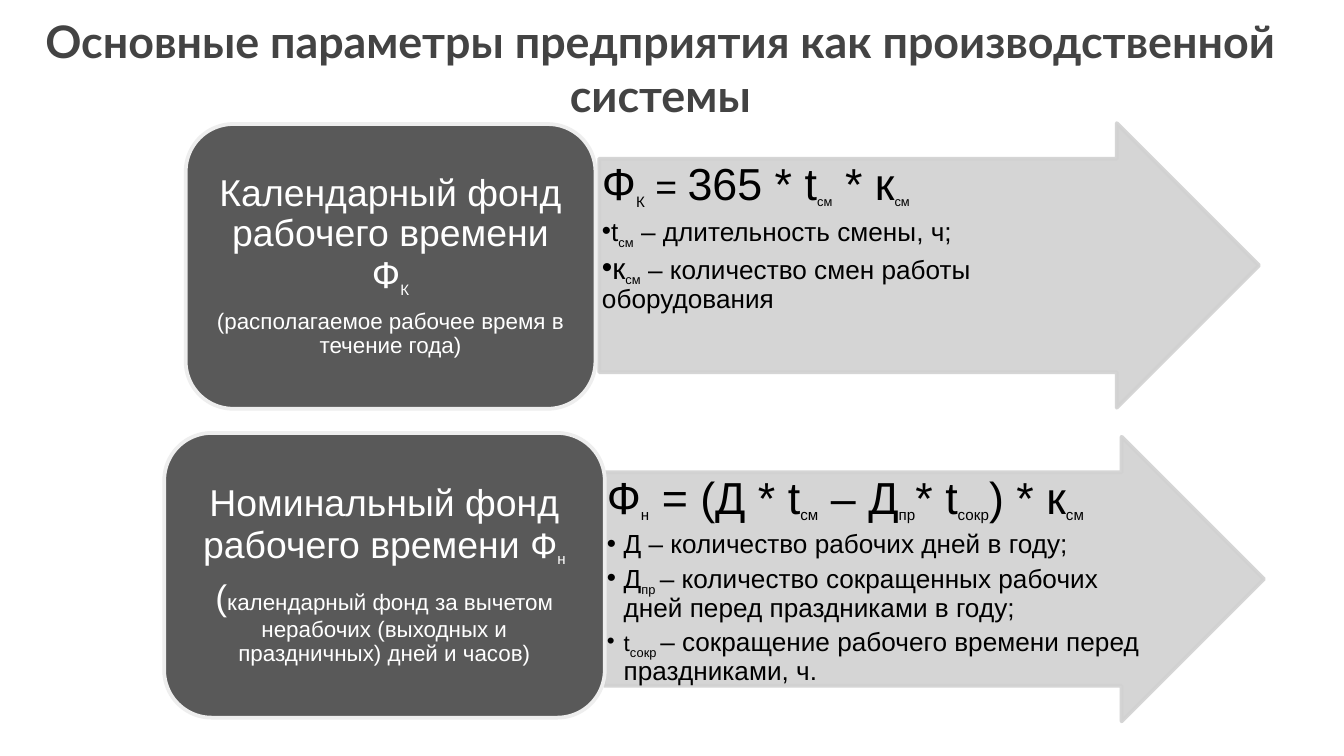
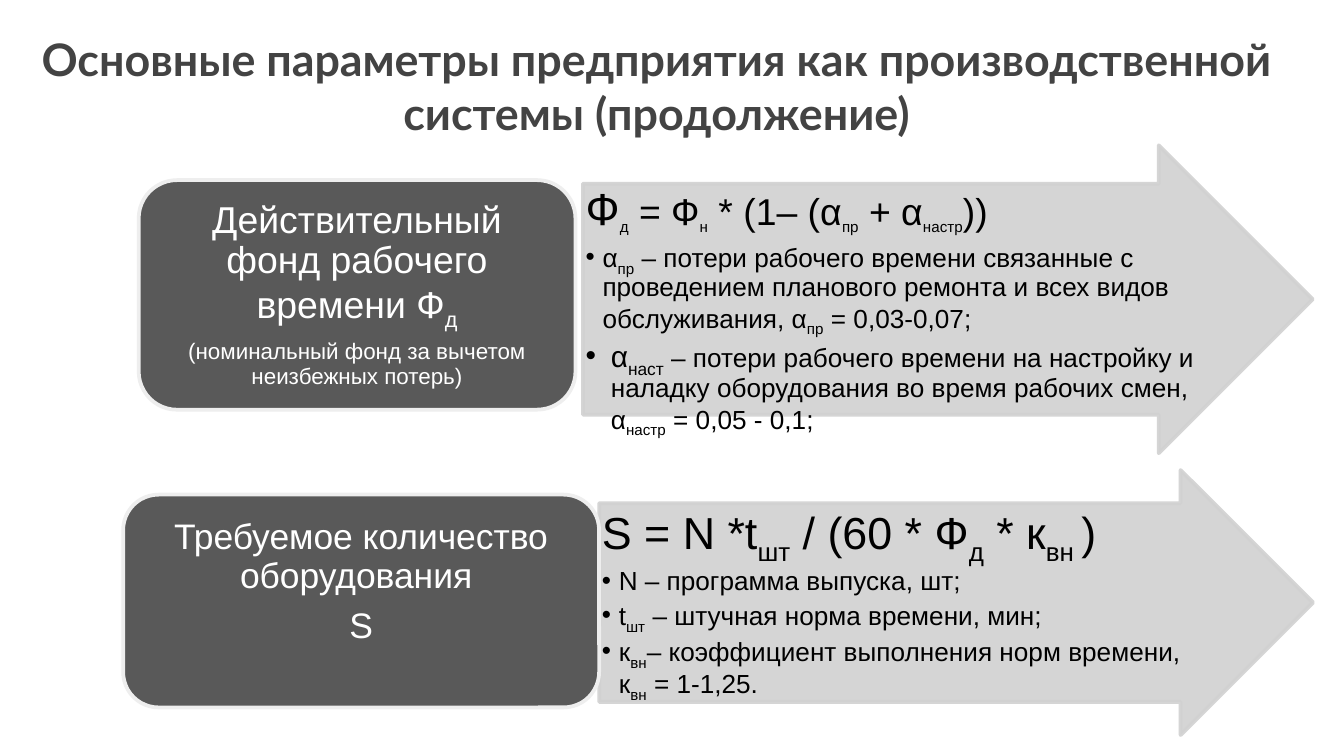
from lxml import etree
from pptx import Presentation
from pptx import util as u
from pptx.dml.color import RGBColor
from pptx.enum import shapes, text
from pptx.oxml import ns

Pt = u.Pt
TITLE_GREY = RGBColor(0x43, 0x43, 0x43)
BOX_GREY = RGBColor(0x59, 0x59, 0x59)
BOX_EDGE = RGBColor(0xEE, 0xEE, 0xEE)
ARROW_GREY = RGBColor(0xD1, 0xD1, 0xD1)
BLACK = RGBColor(0, 0, 0)
WHITE = RGBColor(0xFF, 0xFF, 0xFF)
SUB = "-25000"  # baseline shift of an index
TITLE = "Основные параметры предприятия как производственной системы"

# Each slide: title, title place, rows.
# Each row: box place, box bottom inset, box paragraphs, arrow place, formula, bullets.
# A paragraph is a list of spans (text, size[, SUB]); a bullet also has left margin and hang.
SLIDES = [
    (TITLE, (2, 0), [
        ((99.5, 66.5, 219.5, 152.5), 3, [
            [("Календарный фонд рабочего времени Ф", 20), ("К", 14, SUB)],
            [("(располагаемое рабочее время в течение года)", 12)],
        ], (321, 66, 353.5, 152.5), [
            ("Ф", 24), ("К", 14, SUB), (" = ", 20), ("365 * t", 24),
            ("см", 12, SUB), (" * к", 24), ("см", 12, SUB),
        ], [
            (0, 9, [("t", 14), ("см", 12, SUB), (" – длительность смены, ч;", 14)]),
            (0, 13.5, [("к", 16), ("см", 12, SUB),
                       (" – количество смен работы оборудования", 14)]),
        ]),
        ((88, 232, 236, 152.5), 3, [
            [("Номинальный фонд рабочего времени ", 20), ("Ф", 19), ("н", 14, SUB)],
            [("(", 19), ("календарный фонд за вычетом нерабочих "
                         "(выходных и праздничных) дней и часов)", 12)],
        ], (323.6, 234, 353.5, 152.5), [
            ("Ф", 24), ("н", 14, SUB), (" = (Д * t", 24), ("см", 14, SUB),
            (" – Д", 24), ("пр", 14, SUB), ("* t", 24), ("сокр", 14, SUB),
            (") * к", 24), ("см", 14, SUB),
        ], [
            (9, 9, [("Д – количество рабочих дней в году;", 14)]),
            (9, 9, [("Д", 14), ("пр", 12, SUB), (" ", 14, SUB),
                    ("– количество сокращенных рабочих дней перед праздниками в году;", 14)]),
            (9, 9, [("t", 12), ("сокр ", 12, SUB),
                    ("– сокращение рабочего времени перед праздниками, ч.", 14)]),
        ]),
    ]),
    (TITLE + " (продолжение)", (0, 10), [
        ((74.3, 96.5, 234, 123), 3, [
            [("Действительный фонд рабочего времени Ф", 20), ("д", 20, SUB)],
            [("(номинальный фонд за вычетом неизбежных потерь)", 12)],
        ], (312.3, 77.8, 391, 165), [
            ("Ф", 24), ("д", 14, SUB), (" = Ф", 20), ("н", 14, SUB),
            (" * (1– (α", 20), ("пр", 14, SUB), (" + α", 20),
            ("настр", 14, SUB), ("))", 20),
        ], [
            (9, 9, [("α", 14), ("пр", 14, SUB),
                    (" – потери рабочего времени связанные с проведением планового "
                     "ремонта и всех видов обслуживания, α", 14),
                    ("пр", 14, SUB), (" = 0,03-0,07;", 14)]),
            (13.5, 13.5, [("α", 16), ("наст", 16, SUB),
                          (" – потери рабочего времени на настройку и наладку "
                           "оборудования во время рабочих смен, α", 14),
                          ("настр", 14, SUB), (" = 0,05 - 0,1;", 14)]),
        ]),
        ((66, 265, 255, 114), 22.5, [
            [("Требуемое количество оборудования ", 19)],
            [("S", 19)],
        ], (321, 251.8, 382.5, 142), [
            ("S = N *t", 24), ("шт", 24, SUB), (" / (60 * Ф", 24), ("д", 24, SUB),
            (" * к", 24), ("вн ", 24, SUB), (")", 24),
        ], [
            (9, 9, [("N – программа выпуска, шт;", 14)]),
            (9, 9, [("t", 14), ("шт", 14, SUB), (" – штучная норма времени, мин;", 14)]),
            (9, 9, [("к", 14), ("вн", 14, SUB),
                    ("– коэффициент выполнения норм времени, к", 14),
                    ("вн", 14, SUB), (" = 1-1,25.", 14)]),
        ]),
    ]),
]


def add_block(page, kind, place, fill, edge, insets, anchor):
    """Add a filled shape with its text frame set up."""
    block = page.shapes.add_shape(kind, *map(Pt, place))
    block.shadow.inherit = False
    block.fill.solid()
    block.fill.fore_color.rgb = fill
    block.line.color.rgb = edge
    block.line.width = Pt(2)
    frame = block.text_frame
    frame.word_wrap = True
    frame.vertical_anchor = anchor
    (frame.margin_left, frame.margin_top,
     frame.margin_right, frame.margin_bottom) = map(Pt, insets)
    return block


def write_para(frame, first, spans, color, align, after, left=0, hang=0, bullet=False):
    """Write one paragraph; after is the space below in percent of a line."""
    para = frame.paragraphs[0] if first else frame.add_paragraph()
    para.alignment = align
    para.line_spacing = 0.9
    props = para._p.get_or_add_pPr()
    props.set("marL", str(Pt(left)))
    props.set("indent", str(-Pt(hang)))
    space = etree.SubElement(props, ns.qn("a:spcAft"))
    etree.SubElement(space, ns.qn("a:spcPct"), val=str(after * 1000))
    if bullet:
        tint = etree.SubElement(props, ns.qn("a:buClr"))
        etree.SubElement(tint, ns.qn("a:srgbClr"), val=str(color))
        etree.SubElement(props, ns.qn("a:buFont"), typeface="Arial")
        etree.SubElement(props, ns.qn("a:buChar"), char="•")
    para.font.name = "Arial"
    para.font.color.rgb = color
    same_size = len({size for _, size, *_ in spans}) == 1
    if same_size:
        para.font.size = Pt(spans[0][1])
    for words, size, *shift in spans:
        span = para.add_run()
        span.text = words
        if not same_size:
            span.font.size = Pt(size)
        if shift:
            span._r.get_or_add_rPr().set("baseline", shift[0])


deck = Presentation()
deck.slide_width, deck.slide_height = Pt(720), Pt(405)

for title, (title_left, title_top), rows in SLIDES:
    page = deck.slides.add_slide(deck.slide_layouts[6])

    # Title
    box = page.shapes.add_textbox(Pt(title_left), Pt(title_top), Pt(703.5), Pt(39.5))
    frame = box.text_frame
    frame.word_wrap = True
    frame.margin_left = frame.margin_right = Pt(7.2)
    frame.margin_top = frame.margin_bottom = Pt(7.2)
    para = frame.paragraphs[0]
    para.text = title
    para.alignment = text.PP_ALIGN.CENTER
    para.font.name, para.font.size, para.font.bold = "Lato", Pt(24), True
    para.font.color.rgb = TITLE_GREY

    for box_place, box_bottom, names, arrow_place, formula, bullets in rows:
        # Arrow with the formula and its terms
        arrow = add_block(page, shapes.MSO_SHAPE.RIGHT_ARROW, arrow_place,
                          ARROW_GREY, ARROW_GREY, (1.5, 1.5, 1.5, 1.5),
                          text.MSO_ANCHOR.TOP)
        arrow.adjustments[0], arrow.adjustments[1] = 0.75, 0.5
        for tint in arrow._element.spPr.iter(ns.qn("a:srgbClr")):
            etree.SubElement(tint, ns.qn("a:alpha"), val="90000")
        write_para(arrow.text_frame, True, formula, BLACK, text.PP_ALIGN.LEFT, 15, 18, 18)
        for left, hang, spans in bullets:
            write_para(arrow.text_frame, False, spans, BLACK, text.PP_ALIGN.LEFT, 15,
                       left, hang, bullet=True)

        # Box with the name of the parameter
        name_box = add_block(page, shapes.MSO_SHAPE.ROUNDED_RECTANGLE, box_place,
                             BOX_GREY, BOX_EDGE, (6, 3, 6, box_bottom),
                             text.MSO_ANCHOR.MIDDLE)
        for index, spans in enumerate(names):
            write_para(name_box.text_frame, index == 0, spans, WHITE,
                       text.PP_ALIGN.CENTER, 35)

deck.save("out.pptx")
